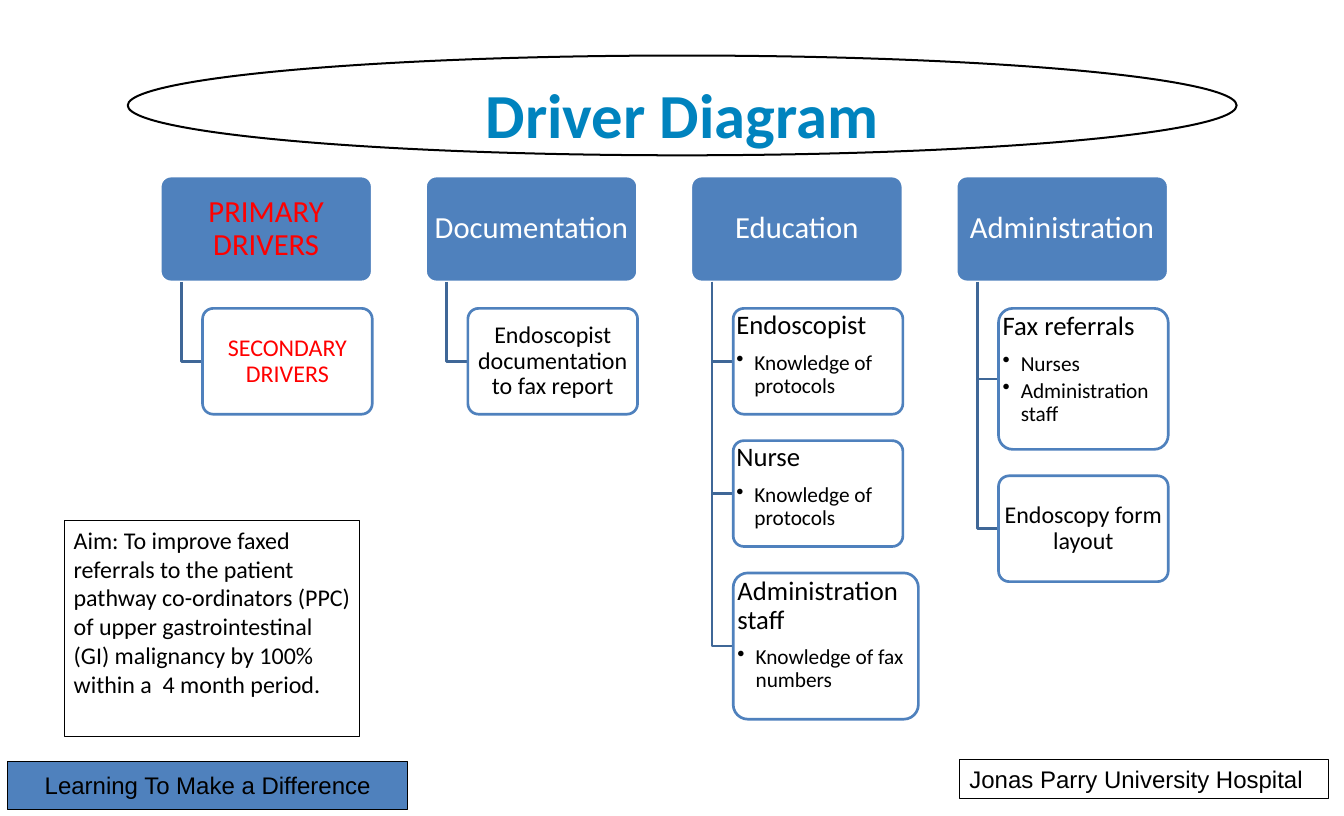
from dataclasses import dataclass

from lxml.etree import SubElement
from pptx import Presentation
from pptx.dml.color import RGBColor
from pptx.enum.shapes import MSO_SHAPE
from pptx.enum.text import MSO_ANCHOR, PP_ALIGN
from pptx.oxml.ns import qn
from pptx.util import Cm, Pt


@dataclass(frozen=True)
class Theme:
    blue: str = "4F81BD"
    connector: str = "3F6797"
    title: str = "0083BE"
    legend: str = "FF0000"
    black: str = "000000"
    white: str = "FFFFFF"
    heading_font: str = "Calibri"
    footer_font: str = "Arial"
    title_size: float = 47
    driver_size: float = 23
    topic_size: float = 20
    body_size: float = 18
    bullet_size: float = 16


THEME = Theme()

# Grid of the driver tree, in centimetres
TREE_LEFT, TREE_TOP = 4.24, 4.66
COLUMN_PITCH = 7.02
DRIVER_WIDTH, DRIVER_HEIGHT = 5.61, 2.8
CARD_INDENT, CARD_WIDTH, CARD_HEIGHT = 1.12, 4.49, 2.8
ROW_GAP = 0.7

# Each column: primary driver, text colour or None for the usual ones, cards.
# Each card: text, bullets, width, height.
COLUMNS = [
    ("PRIMARY DRIVERS", THEME.legend, [
        ("SECONDARY DRIVERS", [], CARD_WIDTH, CARD_HEIGHT)]),
    ("Documentation", None, [
        ("Endoscopist documentation to fax report", [], CARD_WIDTH, CARD_HEIGHT)]),
    ("Education", None, [
        ("Endoscopist", ["Knowledge of protocols"], CARD_WIDTH, CARD_HEIGHT),
        ("Nurse", ["Knowledge of protocols"], CARD_WIDTH, CARD_HEIGHT),
        ("Administration staff", ["Knowledge of fax numbers"], 4.9, 3.87)]),
    ("Administration", None, [
        ("Fax referrals", ["Nurses", "Administration staff"], CARD_WIDTH, 3.73),
        ("Endoscopy form layout", [], CARD_WIDTH, CARD_HEIGHT)]),
]


def add_box(slide, kind, left, top, width, height, fill, line, line_width,
            insets=(0.25, 0.13), anchor=MSO_ANCHOR.TOP, wrap=True):
    shape = slide.shapes.add_shape(kind, Cm(left), Cm(top), Cm(width), Cm(height))
    shape.shadow.inherit = False
    shape.fill.solid()
    shape.fill.fore_color.rgb = RGBColor.from_string(fill)
    shape.line.color.rgb = RGBColor.from_string(line)
    shape.line.width = Pt(line_width)
    if kind == MSO_SHAPE.ROUNDED_RECTANGLE:
        shape.adjustments[0] = 0.1
    frame = shape.text_frame
    frame.margin_left = frame.margin_right = Cm(insets[0])
    frame.margin_top = frame.margin_bottom = Cm(insets[1])
    frame.vertical_anchor = anchor
    frame.word_wrap = wrap
    return shape


def add_text(shape, text, *, size, color=THEME.black, font=THEME.heading_font,
             bold=False, align=PP_ALIGN.LEFT, line_spacing=None,
             space_after=None, bullet=False):
    """Fill the empty first paragraph, or append a new one."""
    frame = shape.text_frame
    paragraph = frame.add_paragraph() if frame.text else frame.paragraphs[0]
    paragraph.alignment = align
    if line_spacing:
        paragraph.line_spacing = line_spacing
    if space_after:
        paragraph.space_after = Pt(space_after)
    run = paragraph.add_run()
    run.text = text
    run.font.size = Pt(size)
    run.font.name = font
    run.font.bold = bold
    run.font.color.rgb = RGBColor.from_string(color)
    if bullet:
        paragraph.level = 1
        properties = paragraph._p.get_or_add_pPr()
        properties.set("marL", str(Cm(0.48)))
        properties.set("indent", str(-Cm(0.48)))
        SubElement(properties, qn("a:buChar")).set("char", "•")


def add_elbow(slide, left, top, right, bottom):
    """Draw a line down from a driver and across to a card."""
    builder = slide.shapes.build_freeform(Cm(left), Cm(top))
    builder.add_line_segments(
        [(Cm(left), Cm(bottom)), (Cm(right), Cm(bottom))], close=False)
    shape = builder.convert_to_shape()
    shape.shadow.inherit = False
    shape.fill.background()
    shape.line.color.rgb = RGBColor.from_string(THEME.connector)
    shape.line.width = Pt(2)


def add_driver(slide, left, text, color):
    shape = add_box(slide, MSO_SHAPE.ROUNDED_RECTANGLE, left, TREE_TOP,
                    DRIVER_WIDTH, DRIVER_HEIGHT, THEME.blue, THEME.white, 2,
                    insets=(0.05, 0), anchor=MSO_ANCHOR.MIDDLE)
    add_text(shape, text, size=THEME.driver_size, color=color,
             align=PP_ALIGN.CENTER, line_spacing=0.9, space_after=9.5)


def add_card(slide, left, top, width, height, text, bullets, color):
    """Centre a lone text; put a topic with bullets at the top left."""
    shape = add_box(slide, MSO_SHAPE.ROUNDED_RECTANGLE, left, top, width, height,
                    THEME.white, THEME.blue, 2, insets=(0, 0),
                    anchor=MSO_ANCHOR.TOP if bullets else MSO_ANCHOR.MIDDLE)
    add_text(shape, text, color=color,
             size=THEME.topic_size if bullets else THEME.body_size,
             align=PP_ALIGN.LEFT if bullets else PP_ALIGN.CENTER,
             line_spacing=0.9, space_after=8.5 if bullets else 7.5)
    for bullet in bullets:
        add_text(shape, bullet, size=THEME.bullet_size, line_spacing=0.9,
                 space_after=3, bullet=True)


def add_column(slide, left, driver, color, cards):
    add_driver(slide, left, driver, color or THEME.white)
    driver_bottom = TREE_TOP + DRIVER_HEIGHT
    card_left = left + CARD_INDENT
    top = driver_bottom + ROW_GAP
    for text, bullets, width, height in cards:
        add_elbow(slide, left + CARD_INDENT / 2, driver_bottom,
                  card_left, top + height / 2)
        add_card(slide, card_left, top, width, height, text, bullets,
                 color or THEME.black)
        top += height + ROW_GAP


def add_title(slide):
    shape = add_box(slide, MSO_SHAPE.OVAL, 3.38, 1.47, 29.34, 2.64,
                    THEME.white, THEME.black, 1.5, insets=(0.33, 0.15))
    add_text(shape, "Driver Diagram", size=THEME.title_size, color=THEME.title,
             bold=True, align=PP_ALIGN.CENTER)


def add_aim(slide):
    shape = add_box(slide, MSO_SHAPE.RECTANGLE, 1.7, 13.77, 7.82, 5.72,
                    THEME.white, THEME.black, 0.75)
    add_text(shape, "Aim: To improve faxed referrals to the patient pathway "
             "co-ordinators (PPC) of upper gastrointestinal (GI) malignancy "
             "by 100% within a  4 month period.", size=THEME.body_size)


def add_footer(slide):
    hospital = add_box(slide, MSO_SHAPE.RECTANGLE, 25.4, 20.1, 9.75, 1.03,
                       THEME.white, THEME.black, 0.75, wrap=False)
    add_text(hospital, "Jonas Parry University Hospital",
             size=THEME.body_size, font=THEME.footer_font)
    motto = add_box(slide, MSO_SHAPE.RECTANGLE, 0.2, 20.14, 10.59, 1.27,
                    THEME.blue, THEME.black, 0.75,
                    anchor=MSO_ANCHOR.MIDDLE, wrap=False)
    add_text(motto, "Learning To Make a Difference", size=THEME.body_size,
             font=THEME.footer_font, align=PP_ALIGN.CENTER)


def main():
    presentation = Presentation()
    presentation.slide_width = Cm(35.56)
    presentation.slide_height = Cm(21.59)
    slide = presentation.slides.add_slide(presentation.slide_layouts[6])
    for index, (driver, color, cards) in enumerate(COLUMNS):
        add_column(slide, TREE_LEFT + index * COLUMN_PITCH, driver, color, cards)
    add_title(slide)
    add_aim(slide)
    add_footer(slide)
    presentation.save("out.pptx")


if __name__ == "__main__":
    main()
